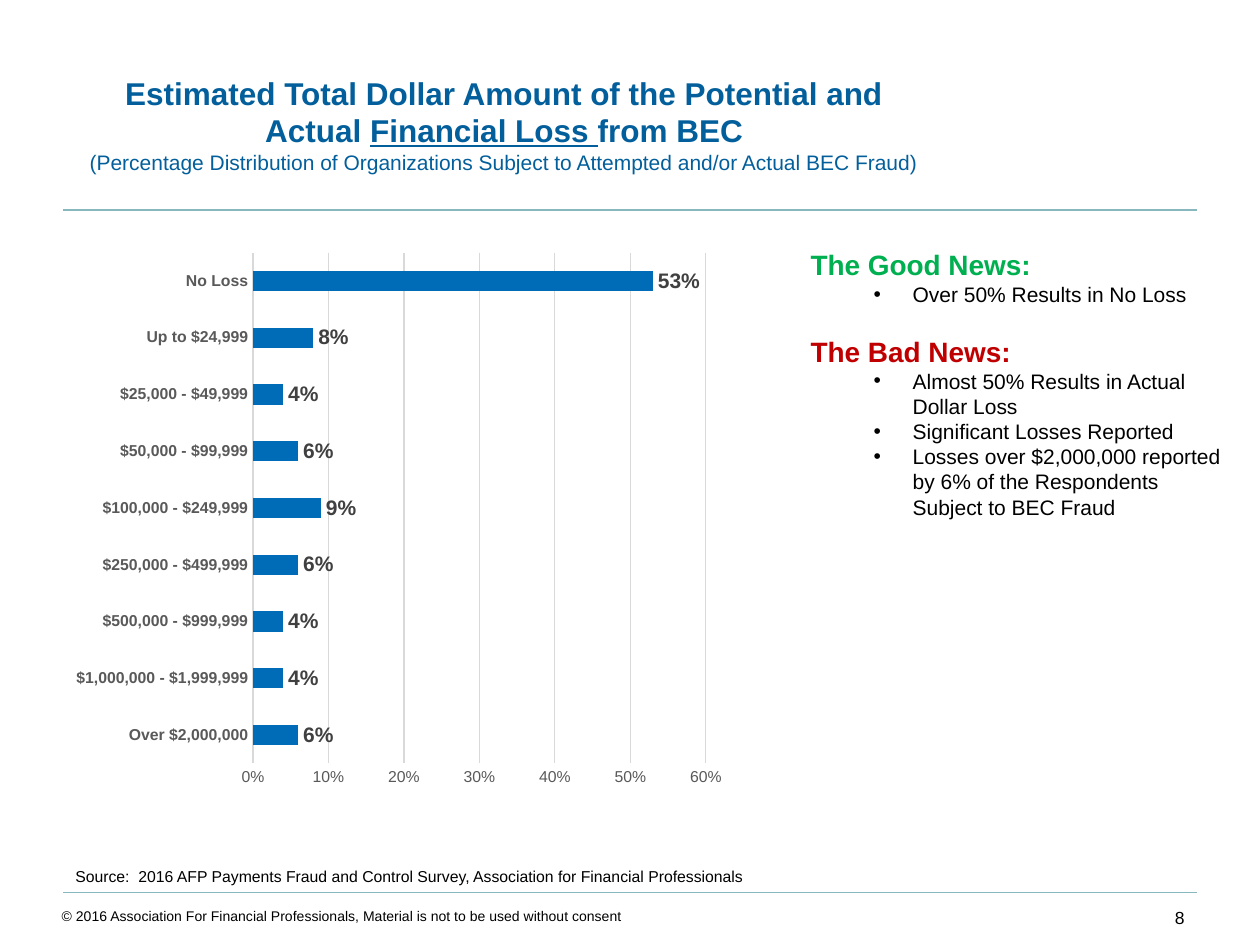
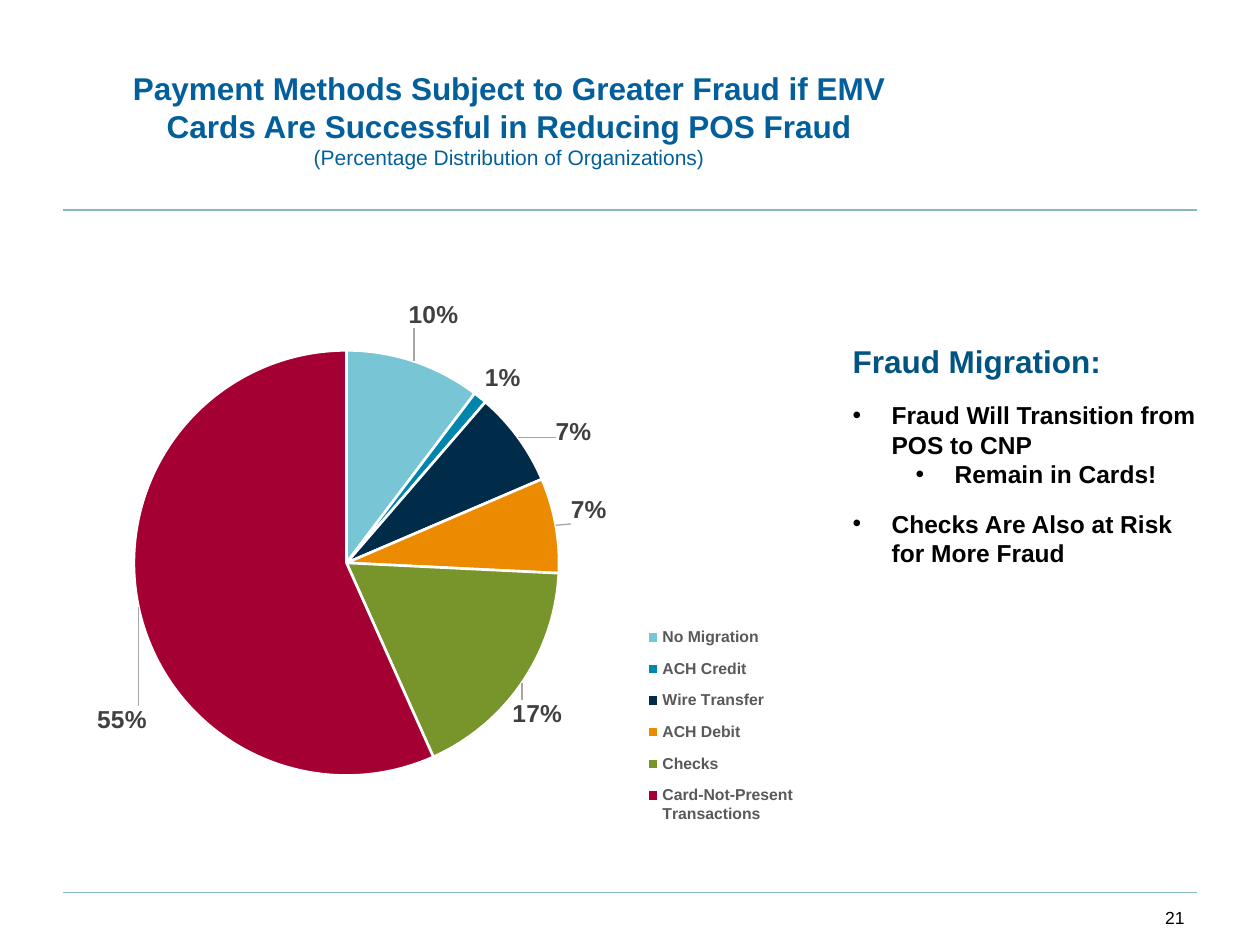
"""Build two slides on payment fraud: a bar chart of losses and a pie of methods."""
from lxml import etree
from pptx import Presentation
from pptx.chart.data import CategoryChartData as Data
from pptx.dml.color import RGBColor as RGB
from pptx.enum.chart import XL_CHART_TYPE as Kind, XL_LABEL_POSITION as Spot
from pptx.enum.chart import XL_LEGEND_POSITION as Side, XL_TICK_MARK as Tick
from pptx.enum.shapes import MSO_CONNECTOR as Link
from pptx.enum.text import MSO_ANCHOR as Anchor, MSO_AUTO_SIZE as Fit, PP_ALIGN as Align
from pptx.oxml import parse_xml
from pptx.oxml.ns import nsdecls, qn
from pptx.util import Inches, Pt

COLS, ROWS = 120, 90
WIDE, HIGH = Inches(10), Inches(7.5)
FACE = "Arial"

BLACK, WHITE = RGB(0, 0, 0), RGB(255, 255, 255)
BLUE, NAVY, TEAL = RGB(0x03, 0x5F, 0x9B), RGB(0x00, 0x54, 0x81), RGB(0x87, 0xB8, 0xC0)
GREEN, RED, BAR = RGB(0x00, 0xB0, 0x50), RGB(0xC0, 0, 0), RGB(0x00, 0x6B, 0xB6)
DARK, GRAY, PALE = RGB(0x40, 0x40, 0x40), RGB(0x59, 0x59, 0x59), RGB(0xD9, 0xD9, 0xD9)
SLICES = [RGB(0x77, 0xC5, 0xD5), RGB(0x00, 0x85, 0xAD), RGB(0x00, 0x2B, 0x49),
          RGB(0xED, 0x8B, 0x00), RGB(0x78, 0x95, 0x2C), RGB(0xA5, 0x00, 0x34)]


def look(size, color=BLACK, **more):
    return {"size": Pt(size), "color": color, "bold": False, **more}


HEAD = look(18, BLUE, bold=True)
UNDER = {**HEAD, "underline": True}
SUB = look(12, BLUE)
GOOD, BAD = look(16, GREEN, bold=True), look(16, RED, bold=True)
TOPIC = look(18, NAVY, bold=True)
ITEM, BOLD = look(12), look(14, bold=True)
TICK, NAME = look(9, GRAY), look(9, GRAY, bold=True)

FLAT = {"align": Align.LEFT}
MID = {"align": Align.CENTER}
END = {"align": Align.RIGHT}
DOT = {**FLAT, "left": 0.31, "dot": True}
DEEP = {**FLAT, "left": 0.81, "dot": True, "level": 1}

LOSS = {
    "page": "8",
    "title": ((7, 6.4, 82, 10.9), [
        (MID, [("Estimated Total Dollar Amount of the Potential and Actual ", HEAD),
               ("Financial Loss ", UNDER), ("from BEC", HEAD)]),
        (MID, [("(Percentage Distribution of Organizations Subject to "
                "Attempted and/or Actual BEC Fraud)", SUB)])]),
    "body": ((76, 23, 42.5, 32.3), [
        (FLAT, [("The Good News:", GOOD)]),
        (DEEP, [("Over 50% Results in No Loss", ITEM)]),
        ({**FLAT, "gap": 16}, [("The Bad News:", BAD)]),
        (DEEP, [("Almost 50% Results in Actual Dollar Loss", ITEM)]),
        (DEEP, [("Significant Losses Reported", ITEM)]),
        (DEEP, [("Losses over $2,000,000 reported by 6% of the Respondents "
                 "Subject to BEC Fraud", ITEM)])]),
    "notes": [
        ((6, 82, 74.6, 3), [(FLAT, [("Source:  2016 AFP Payments Fraud and Control Survey, "
                                     "Association for Financial Professionals", look(9))])]),
        ((4.7, 85.8, 101.5, 4.2), [(FLAT, [("© 2016 Association For Financial Professionals, "
                                            "Material is not to be used without consent",
                                            look(8))])])],
    "chart": (6, 23, 64, 53),
    "rows": [("Over $2,000,000", 0.06), ("$1,000,000 - $1,999,999", 0.04),
             ("$500,000 - $999,999", 0.04), ("$250,000 - $499,999", 0.06),
             ("$100,000 - $249,999", 0.09), ("$50,000 - $99,999", 0.06),
             ("$25,000 - $49,999", 0.04), ("Up to $24,999", 0.08), ("No Loss", 0.53)],
}

SHIFT = {
    "page": "21",
    "title": ((10, 6, 77, 10.9), [
        (MID, [("Payment Methods Subject to Greater Fraud if EMV Cards "
                "Are Successful in Reducing POS Fraud", HEAD)]),
        (MID, [("(Percentage Distribution of Organizations)", SUB)])]),
    "body": ((80, 32, 36, 25), [
        (FLAT, [("Fraud Migration:", TOPIC)]),
        ({**DOT, "gap": 11.5}, [("Fraud Will Transition from POS to CNP", BOLD)]),
        (DEEP, [("Remain in Cards!", BOLD)]),
        ({**DOT, "gap": 11.5}, [("Checks Are Also at Risk for More Fraud", BOLD)])]),
    "notes": [],
    "chart": (6, 22, 75, 62),
    "rows": [("No Migration", 0.1), ("ACH Credit", 0.01), ("Wire Transfer", 0.07),
             ("ACH Debit", 0.07), ("Checks", 0.17), ("Card-Not-Present Transactions", 0.55)],
}
PLOT = (0.09, 0.18, 0.54, 0.66)
KEY = (0.73, 0.59, 0.21, 0.34)
MOVES = {0: (-0.01, -0.04), 2: (0.04, 0.02), 3: (0.01, 0), 4: (-0.02, 0.02), 5: (0.02, 0.15)}


def grid(box):
    """Turn columns and rows into slide lengths."""
    return [int(v * (HIGH / ROWS if i % 2 else WIDE / COLS)) for i, v in enumerate(box)]


def style(font, form):
    font.name = FACE
    for key, val in form.items():
        if key == "color":
            font.color.rgb = val
        else:
            setattr(font, key, val)


def write(shape, box, paras):
    shape.left, shape.top, shape.width, shape.height = grid(box)
    frame = shape.text_frame
    for key, val in {"word_wrap": True, "auto_size": Fit.NONE,
                     "vertical_anchor": Anchor.TOP}.items():
        setattr(frame, key, val)
    for i, (form, runs) in enumerate(paras):
        para = frame.add_paragraph() if i else frame.paragraphs[0]
        para.alignment, para.level = form["align"], form.get("level", 0)
        para.space_before = Pt(form.get("gap", 0))
        props = para._p.get_or_add_pPr()
        dot = form.get("dot")
        props.set("marL", str(Inches(form.get("left", 0))))
        props.set("indent", str(Inches(-0.31 if dot else 0)))
        if dot:
            etree.SubElement(props, qn("a:buFont"), typeface=FACE)
            etree.SubElement(props, qn("a:buChar"), char="•")
        else:
            etree.SubElement(props, qn("a:buNone"))
        for text, face in runs:
            run = para.add_run()
            run.text = text
            style(run.font, face)


def rule(slide, row):
    line = slide.shapes.add_connector(Link.STRAIGHT, *grid((6, row, 114, row)))
    line.line.color.rgb, line.line.width = TEAL, Pt(1)
    etree.SubElement(line._element.spPr, qn("a:effectLst"))


def place(box, inner=False):
    """Give a manual layout for a part of a chart."""
    tags = '<c:layoutTarget val="inner"/>' if inner else ""
    if len(box) == 4:
        tags += '<c:xMode val="edge"/><c:yMode val="edge"/>'
    tags += "".join(f'<c:{k} val="{v}"/>' for k, v in zip("xywh", box))
    return parse_xml(f'<c:layout {nsdecls("c")}><c:manualLayout>{tags}'
                     '</c:manualLayout></c:layout>')


def graph(slide, plan, kind, size):
    data = CategoryData = Data(number_format="0%")
    data.categories = [name for name, _ in plan["rows"]]
    data.add_series("Series 1", [val for _, val in plan["rows"]])
    chart = slide.shapes.add_chart(kind, *grid(plan["chart"]), data).chart
    chart.has_title = chart.has_legend = False
    style(chart.font, look(10))
    plot = chart.plots[0]
    plot.vary_by_categories = kind == Kind.PIE
    plot.has_data_labels = False
    marks = plot.series[0].data_labels
    for key, val in {"show_value": True, "number_format": "0%",
                     "number_format_is_linked": False,
                     "position": Spot.OUTSIDE_END}.items():
        setattr(marks, key, val)
    style(marks.font, look(size, DARK, bold=True))
    return chart, plot, marks


def bars(slide, plan):
    chart, plot, _ = graph(slide, plan, Kind.BAR_CLUSTERED, 12)
    plot.gap_width = 182
    fill = plot.series[0].format.fill
    fill.solid()
    fill.fore_color.rgb = BAR
    cat, val = chart.category_axis, chart.value_axis
    for axis, form in ((cat, NAME), (val, TICK)):
        axis.major_tick_mark = axis.minor_tick_mark = Tick.NONE
        style(axis.tick_labels.font, form)
    val.minimum_scale, val.maximum_scale, val.major_unit = 0, 0.6, 0.1
    val.tick_labels.number_format = "0%"
    val.tick_labels.number_format_is_linked = False
    val.format.line.fill.background()
    val.has_major_gridlines, cat.has_major_gridlines = True, False
    for line in (cat.format.line, val.major_gridlines.format.line):
        line.color.rgb, line.width = PALE, Pt(0.75)


def pie(slide, plan):
    chart, plot, marks = graph(slide, plan, Kind.PIE, 14)
    points = plot.series[0].points
    for i, color in enumerate(SLICES):
        form = points[i].format
        form.fill.solid()
        form.fill.fore_color.rgb = color
        form.line.color.rgb, form.line.width = WHITE, Pt(1.5)
    for i, move in MOVES.items():
        label = points[i].data_label
        style(label.font, look(14, DARK, bold=True))
        label.position = Spot.OUTSIDE_END
        label._dLbl.find(qn("c:idx")).addnext(place(move))
    root = marks._element
    for old in root.findall(qn("c:showLeaderLines")):
        root.remove(old)
    etree.SubElement(root, qn("c:showLeaderLines"), val="1")
    root.append(parse_xml(
        f'<c:leaderLines {nsdecls("c", "a")}><c:spPr><a:ln w="9525"><a:solidFill>'
        '<a:srgbClr val="A6A6A6"/></a:solidFill></a:ln></c:spPr></c:leaderLines>'))
    area = chart._chartSpace.chart.plotArea
    for old in area.findall(qn("c:layout")):
        area.remove(old)
    area.insert(0, place(PLOT, True))
    chart.has_legend = True
    key = chart.legend
    key.position, key.include_in_layout = Side.RIGHT, False
    style(key.font, NAME)
    for old in key._element.findall(qn("c:layout")):
        key._element.remove(old)
    key._element.find(qn("c:legendPos")).addnext(place(KEY))


def build(deck, plan, draw):
    slide = deck.slides.add_slide(deck.slide_layouts[1])
    for row in (20, 85):
        rule(slide, row)
    write(slide.shapes.title, *plan["title"])
    write(slide.placeholders[1], *plan["body"])
    page = ((108, 85.8, 6, 4.2), [(END, [(plan["page"], look(10))])])
    for box, paras in [page, *plan["notes"]]:
        write(slide.shapes.add_textbox(*grid(box)), box, paras)
    draw(slide, plan)


def main():
    deck = Presentation()
    deck.slide_width, deck.slide_height = WIDE, HIGH
    for plan, draw in ((LOSS, bars), (SHIFT, pie)):
        build(deck, plan, draw)
    deck.save("out.pptx")


if __name__ == "__main__":
    main()
